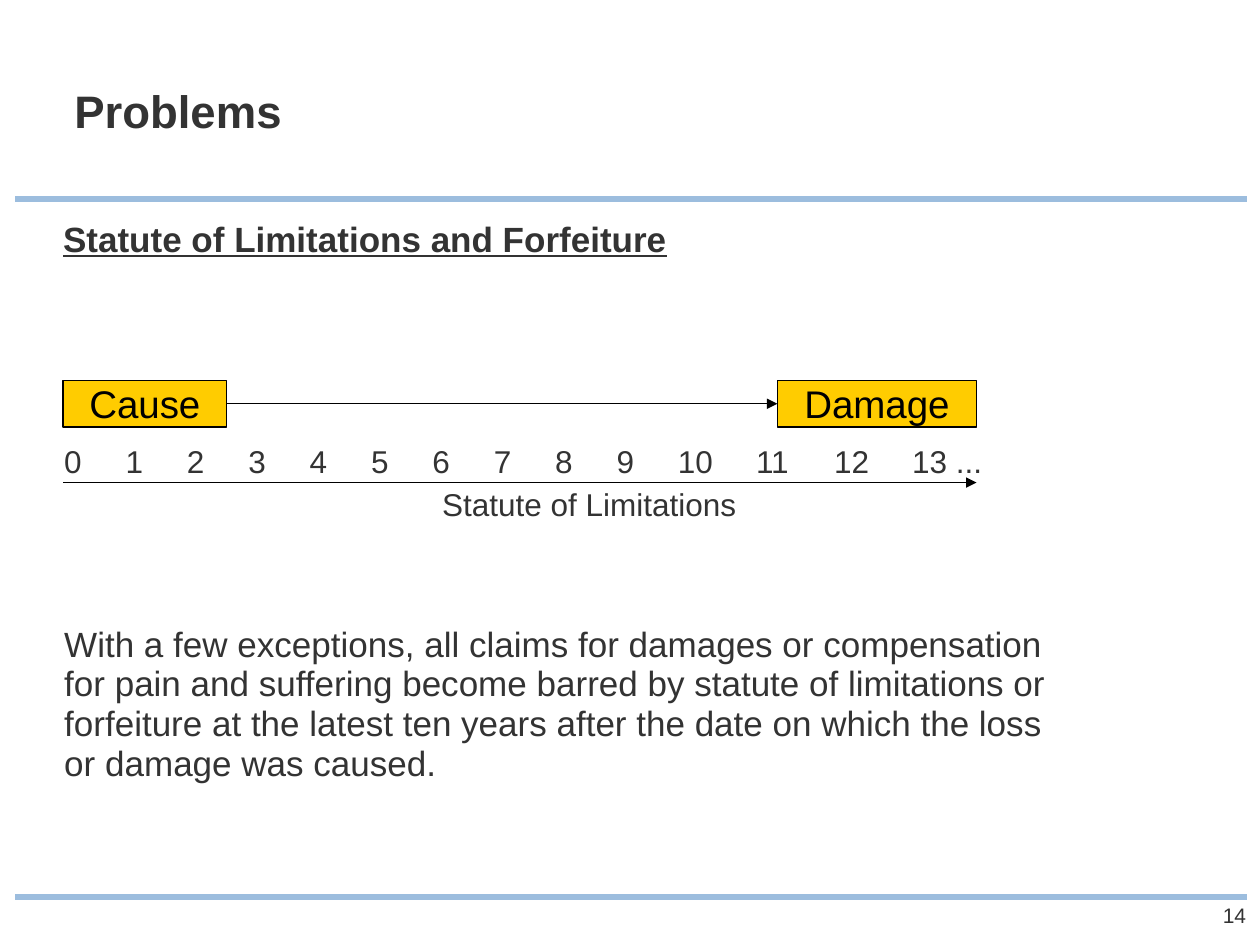
from lxml import etree
from pptx import Presentation
from pptx.dml.color import RGBColor
from pptx.enum.shapes import MSO_CONNECTOR as Connector, MSO_SHAPE as Shape
from pptx.enum.text import MSO_ANCHOR as Anchor, PP_ALIGN as Align
from pptx.oxml.ns import qn
from pptx.util import Inches, Pt

FONT = "Arial"
TEXT = RGBColor(0x33, 0x33, 0x33)
BLACK = RGBColor(0, 0, 0)
RULE = RGBColor(0x9C, 0xBD, 0xDE)
YELLOW = RGBColor(0xFF, 0xCC, 0x00)

LEFT, RIGHT = 0.5, 7.75
EVENT_TOP, EVENT_HEIGHT = 3.02, 0.37
SINGLE_PITCH, DOUBLE_PITCH = 0.487, 0.62  # steps between one- and two-digit years

CLAIMS = (
    "With a few exceptions, all claims for damages or compensation for pain "
    "and suffering become barred by statute of limitations or forfeiture at "
    "the latest ten years after the date on which the loss or damage was caused."
)


def prepare_frame(frame):
    frame.word_wrap = True
    frame.vertical_anchor = Anchor.TOP
    frame.margin_left = frame.margin_top = 0
    frame.margin_right = frame.margin_bottom = 0


def write(paragraph, text, size, color=TEXT, bold=False, underline=False,
          align=Align.LEFT, spacing=1.0, before=0):
    paragraph.alignment = align
    paragraph.line_spacing = spacing
    paragraph.space_before = Pt(before)
    run = paragraph.add_run()
    run.text = text
    font = run.font
    font.name, font.size = FONT, Pt(size)
    font.bold, font.underline = bold, underline
    font.color.rgb = color


def add_text_box(slide, left, top, width, height):
    box = slide.shapes.add_textbox(
        Inches(left), Inches(top), Inches(width), Inches(height))
    prepare_frame(box.text_frame)
    return box.text_frame


def add_event(slide, label, left, width):
    shape = slide.shapes.add_shape(
        Shape.RECTANGLE, Inches(left), Inches(EVENT_TOP),
        Inches(width), Inches(EVENT_HEIGHT))
    shape.shadow.inherit = False
    shape.fill.solid()
    shape.fill.fore_color.rgb = YELLOW
    shape.line.color.rgb = BLACK
    shape.line.width = Pt(0.75)
    prepare_frame(shape.text_frame)
    write(shape.text_frame.paragraphs[0], label, 22, BLACK, align=Align.CENTER)
    return shape


def add_line(slide, start, end, y, color=BLACK, width=0.75, arrow=False):
    line = slide.shapes.add_connector(
        Connector.STRAIGHT, Inches(start), Inches(y), Inches(end), Inches(y))
    line.line.color.rgb = color
    line.line.width = Pt(width)
    if arrow:
        outline = line.line._get_or_add_ln()
        etree.SubElement(outline, qn("a:tailEnd"), type="triangle")
    etree.SubElement(line._element.spPr, qn("a:effectLst"))
    return line


def add_tab_stops(paragraph, positions):
    tab_list = etree.SubElement(
        paragraph._p.get_or_add_pPr(), qn("a:tabLst"))
    for position in positions:
        etree.SubElement(
            tab_list, qn("a:tab"), pos=str(Inches(position)), algn="l")


def add_timeline_text(slide):
    frame = add_text_box(slide, 0.51, 3.53, 7.92, 2.88)

    # Year scale
    years = frame.paragraphs[0]
    add_tab_stops(years, [
        min(year, 10) * SINGLE_PITCH + max(year - 10, 0) * DOUBLE_PITCH
        for year in range(1, 14)])
    write(years, "\t".join(map(str, range(14))) + " ...", 18, spacing=0.95)

    # Scale label
    label = frame.add_paragraph()
    label._p.get_or_add_pPr().set("marL", str(Inches(3)))
    write(label, "Statute of Limitations", 18, spacing=0.95, before=4)

    # Explanation
    write(frame.add_paragraph(), CLAIMS, 20, spacing=0.95, before=58)


def main():
    presentation = Presentation()
    presentation.slide_width = Inches(10)
    presentation.slide_height = Inches(7.5)
    slide = presentation.slides.add_slide(presentation.slide_layouts[6])

    # Page frame
    for y in (1.58, 7.12):
        add_line(slide, 0.12, 9.9, y, RULE, 3)
    number = add_text_box(slide, 9.5, 7.16, 0.39, 0.2)
    write(number.paragraphs[0], "14", 12, align=Align.RIGHT)

    # Headings
    title = add_text_box(slide, 0.59, 0.71, 7.24, 0.89)
    write(title.paragraphs[0], "Problems", 26, bold=True, spacing=0.9)
    heading = add_text_box(slide, LEFT, 1.75, 8.82, 0.4)
    write(heading.paragraphs[0], "Statute of Limitations and Forfeiture", 20,
          bold=True, underline=True, spacing=0.95)

    # Cause and damage
    cause = add_event(slide, "Cause", LEFT, 1.3)
    damage = add_event(slide, "Damage", 6.17, RIGHT - 6.17)
    link = add_line(slide, 1.8, 6.17, EVENT_TOP + EVENT_HEIGHT / 2, arrow=True)
    link.begin_connect(cause, 3)
    link.end_connect(damage, 1)

    # Timeline
    add_timeline_text(slide)
    add_line(slide, LEFT, RIGHT, 3.83, arrow=True)

    presentation.save("out.pptx")


if __name__ == "__main__":
    main()
